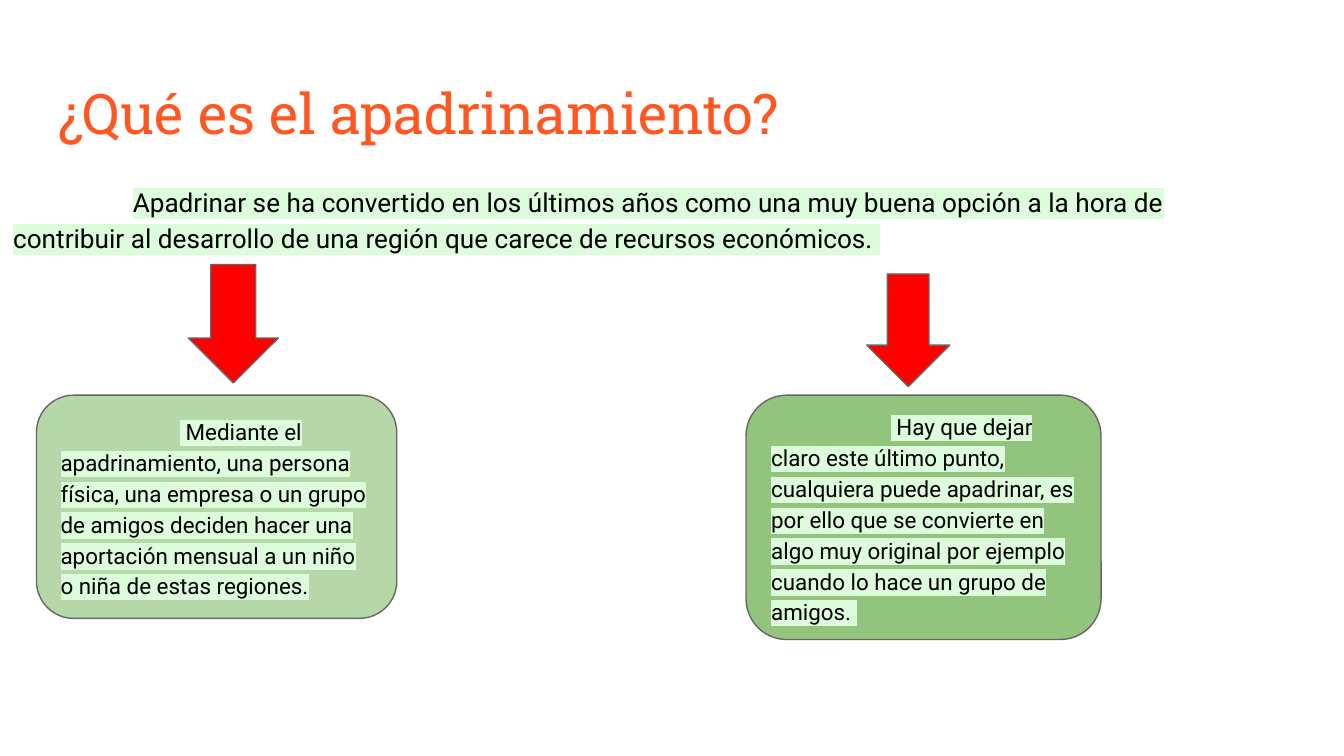
"""Build the slide that explains what sponsorship is."""
from lxml import etree
from pptx import Presentation
from pptx import util as u
from pptx.dml.color import RGBColor
from pptx.enum import shapes, text
from pptx.oxml import ns

COLORS = {
    "title": "FF5722",
    "text": "000000",
    "highlight": "DCFCDC",
    "arrow": "FF0000",
    "outline": "666666",
    "light_green": "B6D7A8",
    "green": "93C47D",
}


def write(shape, content, size, font="Roboto", color="text", highlighted=True):
    frame = shape.text_frame
    frame.word_wrap = True
    frame.margin_left = frame.margin_right = u.Cm(0.25)
    frame.margin_top = frame.margin_bottom = u.Cm(0.25)
    paragraph = frame.paragraphs[0]
    paragraph.alignment = text.PP_ALIGN.LEFT
    paragraph.font.size = u.Pt(size)
    paragraph.font.name = font
    paragraph.font.color.rgb = RGBColor.from_string(COLORS[color])
    run = paragraph.add_run()
    run.text = content
    if highlighted:
        paragraph.line_spacing = 1.15
        paragraph._p.get_or_add_pPr().set("indent", str(u.Cm(2.26)))
        highlight = etree.SubElement(run._r.get_or_add_rPr(), ns.qn("a:highlight"))
        etree.SubElement(highlight, ns.qn("a:srgbClr"), val=COLORS["highlight"])


def add_filled(kind, bounds, color):
    shape = slide.shapes.add_shape(kind, *map(u.Cm, bounds))
    shape.shadow.inherit = False
    shape.fill.solid()
    shape.fill.fore_color.rgb = RGBColor.from_string(COLORS[color])
    shape.line.color.rgb = RGBColor.from_string(COLORS["outline"])
    shape.line.width = u.Pt(0.75)
    return shape


presentation = Presentation()
presentation.slide_width = u.Cm(25.4)
presentation.slide_height = u.Cm(14.29)
slide = presentation.slides.add_slide(presentation.slide_layouts[6])

title = slide.shapes.add_textbox(u.Cm(0.86), u.Cm(1.24), u.Cm(23.67), u.Cm(1.6))
write(title, "¿Qué es el apadrinamiento?", 30, "Roboto Slab", "title", False)

body = slide.shapes.add_textbox(u.Cm(0), u.Cm(3.18), u.Cm(23.67), u.Cm(9.5))
write(body, "Apadrinar se ha convertido en los últimos años como una muy buena opción "
      "a la hora de contribuir al desarrollo de una región que carece de recursos "
      "económicos. ", 14)

branches = [
    ((3.56, 5, 1.7, 2.24), (0.69, 7.47, 6.81, 4.22), "light_green",
     " Mediante el apadrinamiento, una persona física, una empresa o un grupo de "
     "amigos deciden hacer una aportación mensual a un niño o niña de estas regiones."),
    ((16.38, 5.18, 1.57, 2.13), (14.1, 7.47, 6.71, 4.62), "green",
     " Hay que dejar claro este último punto, cualquiera puede apadrinar, es por ello "
     "que se convierte en algo muy original por ejemplo cuando lo hace un grupo de "
     "amigos. "),
]
for arrow_bounds, box_bounds, box_color, content in branches:
    add_filled(shapes.MSO_SHAPE.DOWN_ARROW, arrow_bounds, "arrow")
    box = add_filled(shapes.MSO_SHAPE.ROUNDED_RECTANGLE, box_bounds, box_color)
    box.text_frame.vertical_anchor = text.MSO_ANCHOR.MIDDLE
    write(box, content, 12)

presentation.save("out.pptx")
